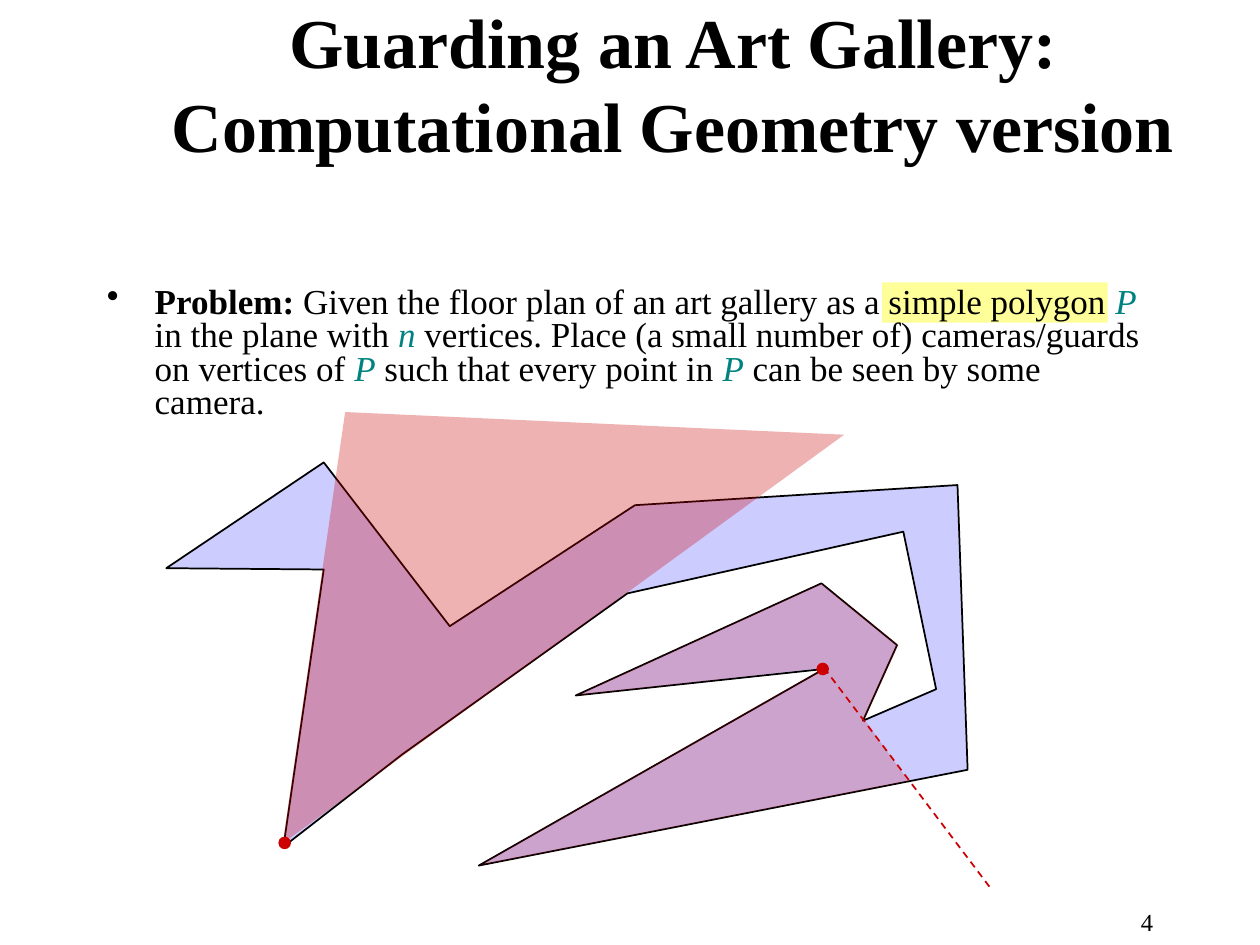
from lxml import etree
from pptx import Presentation
from pptx.dml.color import RGBColor
from pptx.enum.dml import MSO_LINE
from pptx.enum.shapes import MSO_CONNECTOR, MSO_SHAPE
from pptx.enum.text import MSO_ANCHOR, PP_ALIGN
from pptx.oxml.ns import qn
from pptx.util import Pt

PX = 9144  # 100 px to the inch
FONT = "Times New Roman"
RECT, OVAL = MSO_SHAPE.RECTANGLE, MSO_SHAPE.OVAL
STRAIGHT, DASH = MSO_CONNECTOR.STRAIGHT, MSO_LINE.DASH
CENTER, RIGHT = PP_ALIGN.CENTER, PP_ALIGN.RIGHT
TOP, MIDDLE = MSO_ANCHOR.TOP, MSO_ANCHOR.MIDDLE
COLORS = {
    "text": "000000",
    "variable": "008380",
    "highlight": "FFFF99",
    "floor": "CCCCFF",
    "guard": "CC0000",
}

# Corners below are relative to the gallery box.
FLOOR_PLAN = [
    (0, 124), (125, 40), (225, 170), (372, 74), (628, 58), (636, 284),
    (248, 360), (522, 204), (325, 225), (520, 136), (580, 185), (553, 245),
    (611, 220), (585, 95), (366, 144), (187, 272), (93, 345), (125, 125),
]
LEFT_VIEW = [(92, 345), (97, 339), (538, 18), (142, 0)]
RIGHT_VIEW = [
    (522, 203), (325, 225), (520, 136), (581, 185), (554, 244), (589, 293),
    (248, 360),
]
LEFT_GUARD, RIGHT_GUARD = (94, 342), (521, 204)
SIGHT_LINE = [(522, 203), (655, 379)]
GUARD_SIZE = 10

PROBLEM = [
    ("Problem:", "bold"),
    (" Given the floor plan of an art gallery as a simple polygon ", ""),
    ("P", "variable"),
    (" in the plane with ", ""),
    ("n", "variable"),
    (" vertices. Place (a small number of) cameras/guards on vertices of ", ""),
    ("P", "variable"),
    (" such that every point in ", ""),
    ("P", "variable"),
    (" can be seen by some camera.", ""),
]


def rgb(name):
    return RGBColor.from_string(COLORS[name])


def emu(*lengths):
    return [n * PX for n in lengths]


def paint(sp, color, opacity=100, outline=None):
    sp.shadow.inherit = False
    sp.fill.solid()
    sp.fill.fore_color.rgb = rgb(color)
    if opacity < 100:
        clr = sp.fill._xPr.find(qn("a:solidFill"))[0]
        etree.SubElement(clr, qn("a:alpha"), val=str(opacity * 1000))
    if outline:
        sp.line.color.rgb = rgb(outline)
        sp.line.width = Pt(1)
    else:
        sp.line.fill.background()


def add_preset(s, kind, box, color):
    paint(s.shapes.add_shape(kind, *emu(*box)), color)


def add_text(s, box, text, size, align=None, anchor=TOP, bold=False):
    tf = s.shapes.add_textbox(*emu(*box)).text_frame
    tf.word_wrap = True
    tf.vertical_anchor = anchor
    p = tf.paragraphs[0]
    p.text = text
    p.alignment = align
    p.font.name, p.font.size, p.font.bold = FONT, Pt(size), bold
    p.font.color.rgb = rgb("text")
    return p


def add_problem(s, box):
    left, top = box[:2]
    add_preset(s, RECT, (left + 625, top + 1, 179, 32), "highlight")
    p = add_text(s, box, "", 20)
    p.line_spacing = 0.8
    p.space_before = Pt(4)
    pPr = p._p.get_or_add_pPr()
    pPr.set("marL", str(38 * PX))
    pPr.set("indent", str(-38 * PX))
    bullet = etree.Element(qn("a:buChar"), char="•")
    pPr.find(qn("a:defRPr")).addprevious(bullet)
    for text, style in PROBLEM:
        r = p.add_run()
        r.text = text
        r.font.name, r.font.size = FONT, Pt(20)
        r.font.bold = style == "bold"
        r.font.italic = style == "variable"
        r.font.color.rgb = rgb("variable" if style == "variable" else "text")


def add_gallery(s, left, top):
    def polygon(points, *style):
        builder = s.shapes.build_freeform(*points[0], scale=PX)
        builder.add_line_segments(points[1:])
        paint(builder.convert_to_shape(*emu(left, top)), *style)

    def guard(x, y):
        r = GUARD_SIZE // 2
        box = (left + x - r, top + y - r, GUARD_SIZE, GUARD_SIZE)
        add_preset(s, OVAL, box, "guard")

    polygon(FLOOR_PLAN, "floor", 100, "text")
    polygon(LEFT_VIEW, "guard", 30)
    guard(*LEFT_GUARD)
    ends = [n for x, y in SIGHT_LINE for n in emu(left + x, top + y)]
    sight = s.shapes.add_connector(STRAIGHT, *ends)
    sight.line.color.rgb = rgb("guard")
    sight.line.width = Pt(1)
    sight.line.dash_style = DASH
    etree.SubElement(sight._element.spPr, qn("a:effectLst"))
    guard(*RIGHT_GUARD)
    polygon(RIGHT_VIEW, "guard", 20)


def main():
    prs = Presentation()
    prs.slide_width, prs.slide_height = emu(1000, 750)
    s = prs.slides.add_slide(prs.slide_layouts[6])
    add_text(s, (843, 715, 82, 25), "4", 14, RIGHT)
    add_text(s, (50, 3, 968, 125),
             "Guarding an Art Gallery:\vComputational Geometry version",
             40, CENTER, MIDDLE, True)
    add_problem(s, (75, 223, 850, 129))
    add_gallery(s, 132, 327)
    prs.save("out.pptx")


if __name__ == "__main__":
    main()
